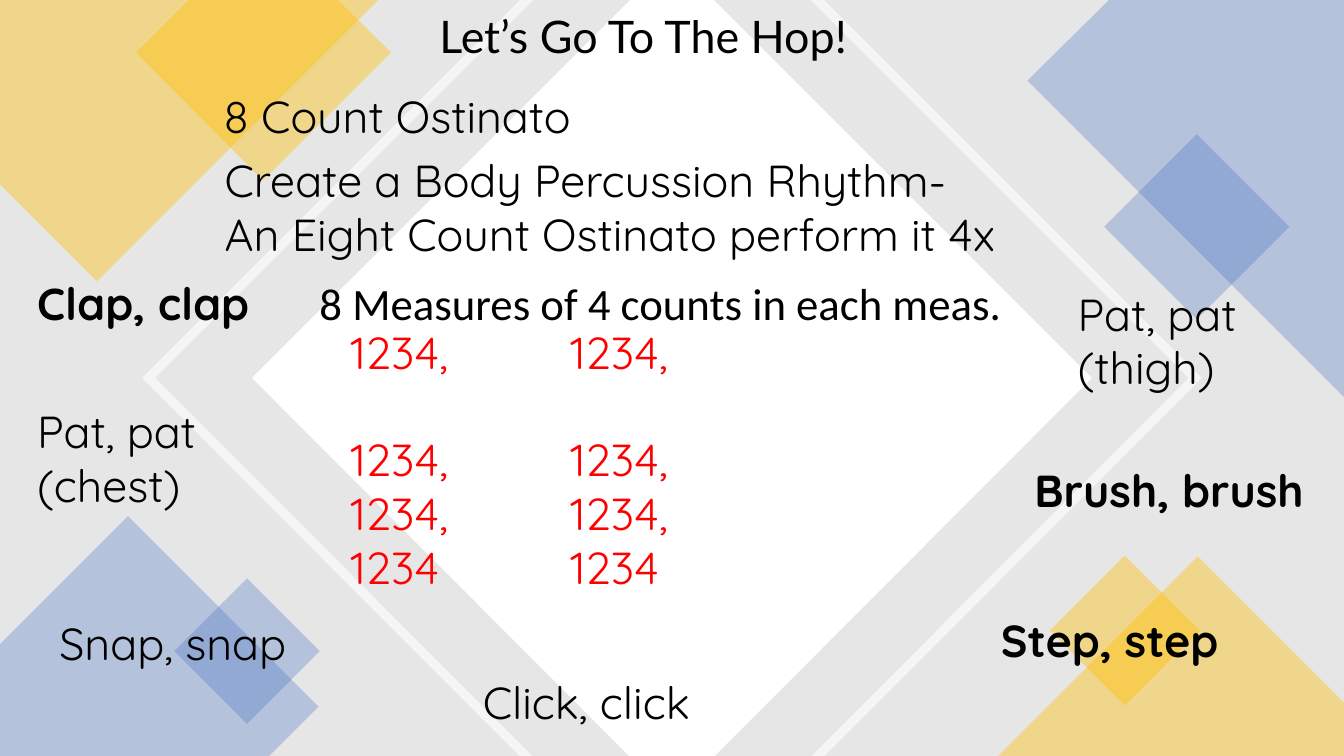
from lxml.etree import SubElement
from pptx import Presentation
from pptx.dml.color import RGBColor
from pptx.enum.shapes import MSO_SHAPE
from pptx.enum.text import MSO_AUTO_SIZE
from pptx.oxml.ns import qn
from pptx.util import Inches, Pt

COLORS = {
    "gray": "E7E6E6",
    "white": "FFFFFF",
    "gold": "FFC000",
    "blue": "4472C4",
    "black": "000000",
    "red": "FF0000",
}
WIDTH, HEIGHT = 13.33, 7.5

deck = Presentation()
deck.slide_width, deck.slide_height = Inches(WIDTH), Inches(HEIGHT)
slide = deck.slides.add_slide(deck.slide_layouts[6])


def paint(shape, color, opacity=100):
    shape.shadow.inherit = False
    shape.line.fill.background()
    shape.fill.solid()
    shape.fill.fore_color.rgb = RGBColor.from_string(COLORS[color])
    if opacity < 100:
        tint = shape.fill._xPr.find(qn("a:solidFill"))[0]
        SubElement(tint, qn("a:alpha"), val=str(opacity * 1000))


def add_text(text, left, top, width, height, font="Quicksand", color="black",
             bold=False, tab=None, gap_after_first=0):
    frame = slide.shapes.add_textbox(
        Inches(left), Inches(top), Inches(width), Inches(height)).text_frame
    frame.word_wrap = True
    frame.auto_size = MSO_AUTO_SIZE.SHAPE_TO_FIT_TEXT
    for number, line in enumerate(text.split("\n")):
        paragraph = frame.paragraphs[0] if number == 0 else frame.add_paragraph()
        if number == 0 and gap_after_first:
            paragraph.space_after = Pt(gap_after_first)
        if tab:
            tabs = SubElement(paragraph._p.get_or_add_pPr(), qn("a:tabLst"))
            SubElement(tabs, qn("a:tab"), pos=str(Inches(tab)), algn="l")
        run = paragraph.add_run()
        run.text = line
        run.font.name = font
        run.font.size = Pt(32)
        run.font.bold = bold
        run.font.color.rgb = RGBColor.from_string(COLORS[color])


# Gray backdrop
backdrop = slide.shapes.add_shape(
    MSO_SHAPE.RECTANGLE, 0, 0, deck.slide_width, deck.slide_height)
paint(backdrop, "gray")

# Large diamonds cut by the slide edges, and the chevrons beside the middle one
right_chevron = [(8.04, 0), (8.17, 0), (11.92, 3.75),
                 (8.18, HEIGHT), (8.05, HEIGHT), (11.79, 3.75)]
left_chevron = [(WIDTH - x, y) for x, y in right_chevron]
cut_diamonds = [
    ("gold", 40, [[(0, 0), (3.75, 0), (0.96, 2.79), (0, 1.83)]]),
    ("gold", 40, [[(1.87, 0), (3.35, 0), (3.88, 0.52), (2.61, 1.79), (1.35, 0.52)]]),
    ("blue", 30, [[(11, 0), (WIDTH, 0), (WIDTH, 3.94), (10.19, 0.8)]]),
    ("blue", 30, [[(1.27, 5.12), (3.16, 7.01), (2.67, HEIGHT), (0, HEIGHT), (0, 6.39)]]),
    ("white", 100, [[(6.25, 0), (7.08, 0), (10.83, 3.75),
                     (7.09, HEIGHT), (6.24, HEIGHT), (2.5, 3.75)]]),
    ("white", 60, [right_chevron, left_chevron]),
    ("gold", 40, [[(11.88, 5.52), (WIDTH, 6.97), (WIDTH, HEIGHT), (9.9, HEIGHT)]]),
]
for color, opacity, outlines in cut_diamonds:
    builder = None
    for outline in outlines:
        start, *corners = [(Inches(x), Inches(y)) for x, y in outline]
        if builder is None:
            builder = slide.shapes.build_freeform(*start)
        else:
            builder.move_to(*start)
        builder.add_line_segments(corners, close=True)
    paint(builder.convert_to_shape(), color, opacity)

# Small whole diamonds
for left, top, side, color, opacity in [
    (11.22, 1.6, 1.3, "blue", 30),
    (1.94, 5.95, 1.02, "blue", 30),
    (10.63, 5.73, 1.05, "gold", 40),
]:
    diamond = slide.shapes.add_shape(
        MSO_SHAPE.RECTANGLE, Inches(left), Inches(top), Inches(side), Inches(side))
    diamond.rotation = 45
    paint(diamond, color, opacity)

# Title and instructions
add_text("Let’s Go To The Hop!", 4.26, 0.04, 5.33, 0.64, font="Lato")
add_text("8 Count Ostinato", 2.12, 0.83, 4.09, 0.64)
add_text("Create a Body Percussion Rhythm-\nAn Eight Count Ostinato perform it 4x",
         2.13, 1.47, 9.46, 1.18)

# Counts in two columns
add_text("8 Measures of 4 counts in each meas.", 3.07, 2.69, 7.02, 0.64, font="Calibri")
add_text("1234,\t1234,\n1234,\t1234,\n1234,\t1234,\n1234\t1234",
         3.38, 3.17, 5.65, 2.79, color="red", tab=2.18, gap_after_first=38.4)

# Body percussion moves around the edge
for move, left, top, width, height, bold in [
    ("Clap, clap", 0.27, 2.69, 2.53, 0.64, True),
    ("Pat, pat\n(chest)", 0.27, 3.96, 1.95, 1.18, False),
    ("Snap, snap", 0.49, 6.06, 2.76, 0.64, False),
    ("Click, click", 4.69, 6.64, 2.63, 0.64, False),
    ("Step, step", 9.83, 6.03, 3.37, 0.64, True),
    ("Brush, brush", 10.16, 4.54, 3.12, 0.64, True),
    ("Pat, pat\n(thigh)", 10.59, 2.79, 2.01, 1.18, False),
]:
    add_text(move, left, top, width, height, bold=bold)

deck.save("out.pptx")
